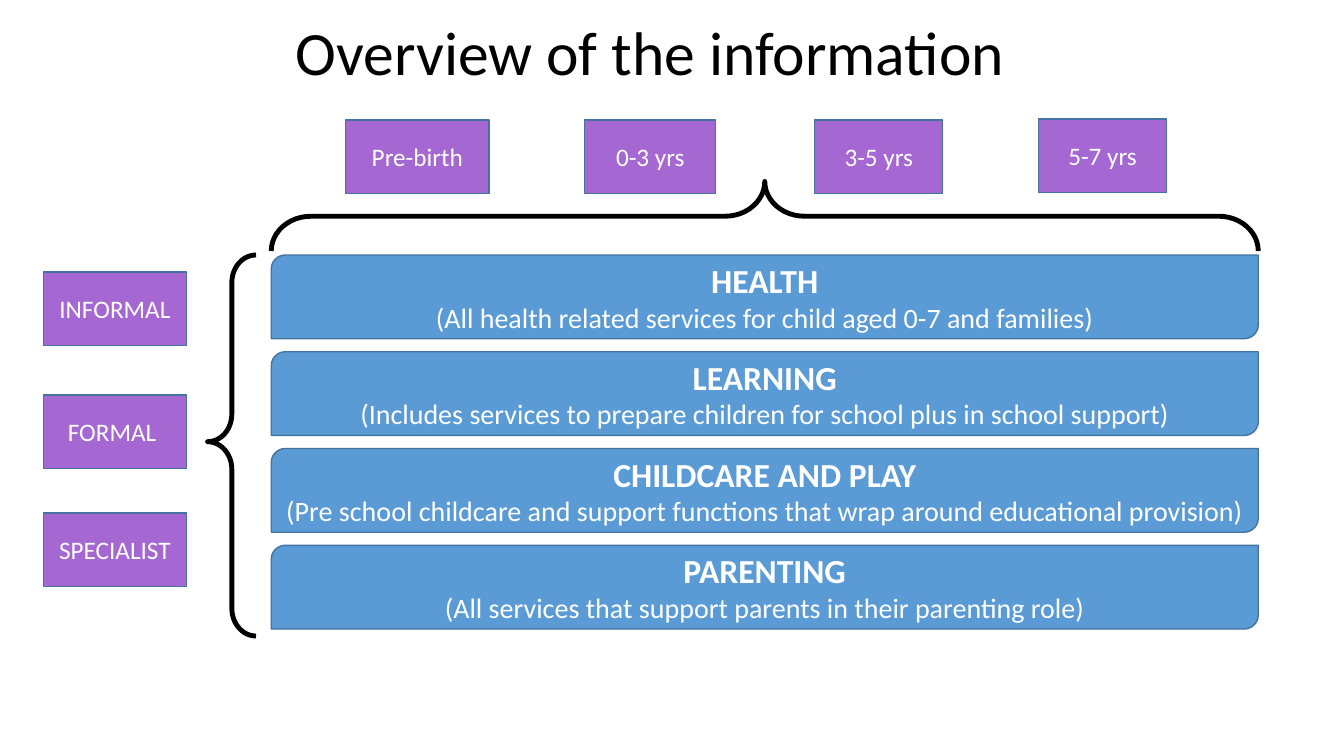
"""Build the overview slide: age bands, support levels and service areas."""
from dataclasses import dataclass

from pptx import Presentation
from pptx.dml.color import RGBColor as Color
from pptx.enum.shapes import MSO_SHAPE as Shape
from pptx.enum.text import MSO_ANCHOR as Anchor, MSO_AUTO_SIZE as AutoSize, PP_ALIGN as Align
from pptx.util import Inches, Pt

TITLE = "Overview of the information"
AREAS = [
    ("HEALTH", "(All health related services for child aged 0-7 and families)"),
    ("LEARNING", "(Includes services to prepare children for school plus in school support)"),
    ("CHILDCARE AND PLAY",
     "(Pre school childcare and support functions that wrap around educational provision)"),
    ("PARENTING", "(All services that support parents in their parenting role)"),
]
AGES = [
    ("Pre-birth", 25.73, 15.87, 10.65),
    ("0-3 yrs", 43.51, 15.87, 9.75),
    ("3-5 yrs", 60.62, 15.87, 9.53),
    ("5-7 yrs", 77.27, 15.73, 9.53),
]
LEVELS = [("INFORMAL", 36), ("FORMAL ", 52.27), ("SPECIALIST", 67.87)]

TITLE_BOX = (5.25, 1.2, 86.27, 12.4)
AREA_LEFT, AREA_TOP, AREA_WIDTH, AREA_HEIGHT, AREA_STEP = 20.18, 33.73, 73.44, 11.07, 12.8
LEVEL_LEFT, LEVEL_WIDTH, TAG_HEIGHT = 3.23, 10.65, 9.73
SIDE_BRACE = (15.45, AREA_TOP, 3.6, 50.4)
TOP_BRACE = (AREA_LEFT, 24, AREA_WIDTH, 9.2)


@dataclass(frozen=True)
class Theme:
    """Colours, font and point sizes."""
    font: str = "Calibri"
    black: str = "000000"
    white: str = "FFFFFF"
    area: str = "5B9BD5"
    tag: str = "A568D2"
    edge: str = "43739E"
    title_size: int = 44
    heading_size: int = 24
    detail_size: int = 20
    tag_size: int = 18
    edge_width: float = 1
    brace_width: float = 3.5


THEME = Theme()
deck = Presentation()
deck.slide_width, deck.slide_height = Inches(13.33), Inches(7.5)
page = deck.slides.add_slide(deck.slide_layouts[5])


def place(left, top, width, height):
    """Turn percentages of the slide into lengths."""
    return (int(deck.slide_width * left / 100), int(deck.slide_height * top / 100),
            int(deck.slide_width * width / 100), int(deck.slide_height * height / 100))


def write(box, lines, color):
    """Fill a shape with centred lines of (text, size, bold)."""
    frame = box.text_frame
    frame.word_wrap = True
    frame.auto_size = AutoSize.NONE
    frame.vertical_anchor = Anchor.MIDDLE
    for index, (text, size, bold) in enumerate(lines):
        para = frame.add_paragraph() if index else frame.paragraphs[0]
        para.alignment = Align.CENTER
        span = para.add_run()
        span.text = text
        span.font.name, span.font.size, span.font.bold = THEME.font, Pt(size), bold
        span.font.color.rgb = Color.from_string(color)


def add_shape(kind, bounds, line, line_width):
    """Add a shadowless outlined shape."""
    box = page.shapes.add_shape(kind, *bounds)
    box.shadow.inherit = False
    box.line.color.rgb = Color.from_string(line)
    box.line.width = Pt(line_width)
    return box


def add_panel(kind, share, fill, lines):
    """Add a filled panel with white text."""
    box = add_shape(kind, place(*share), THEME.edge, THEME.edge_width)
    box.fill.solid()
    box.fill.fore_color.rgb = Color.from_string(fill)
    box.text_frame.margin_left = box.text_frame.margin_right = Inches(0.05)
    write(box, lines, THEME.white)


def add_brace(share, curve, point, upward=False):
    """Add a brace that points left, or up after a quarter turn."""
    left, top, width, height = place(*share)
    if upward:
        left, top = left + (width - height) // 2, top + (height - width) // 2
        width, height = height, width
    brace = add_shape(Shape.LEFT_BRACE, (left, top, width, height),
                      THEME.black, THEME.brace_width)
    brace.fill.background()
    brace.adjustments[0], brace.adjustments[1] = curve, point
    brace.rotation = 90 if upward else 0


def main():
    """Lay out the slide and save it."""
    title = page.shapes.title
    title.left, title.top, title.width, title.height = place(*TITLE_BOX)
    write(title, [(TITLE, THEME.title_size, False)], THEME.black)
    title.text_frame.paragraphs[0].line_spacing = 0.9

    for row, (heading, detail) in enumerate(AREAS):
        share = (AREA_LEFT, AREA_TOP + row * AREA_STEP, AREA_WIDTH, AREA_HEIGHT)
        add_panel(Shape.ROUND_2_DIAG_RECTANGLE, share, THEME.area,
                  [(heading, THEME.heading_size, True), (detail, THEME.detail_size, False)])

    add_brace(SIDE_BRACE, 0.57, 0.49)
    add_brace(TOP_BRACE, 0.57, 0.5, upward=True)

    tags = AGES + [(name, LEVEL_LEFT, top, LEVEL_WIDTH) for name, top in LEVELS]
    for name, left, top, width in tags:
        add_panel(Shape.RECTANGLE, (left, top, width, TAG_HEIGHT), THEME.tag,
                  [(name, THEME.tag_size, False)])

    deck.save("out.pptx")


if __name__ == "__main__":
    main()
